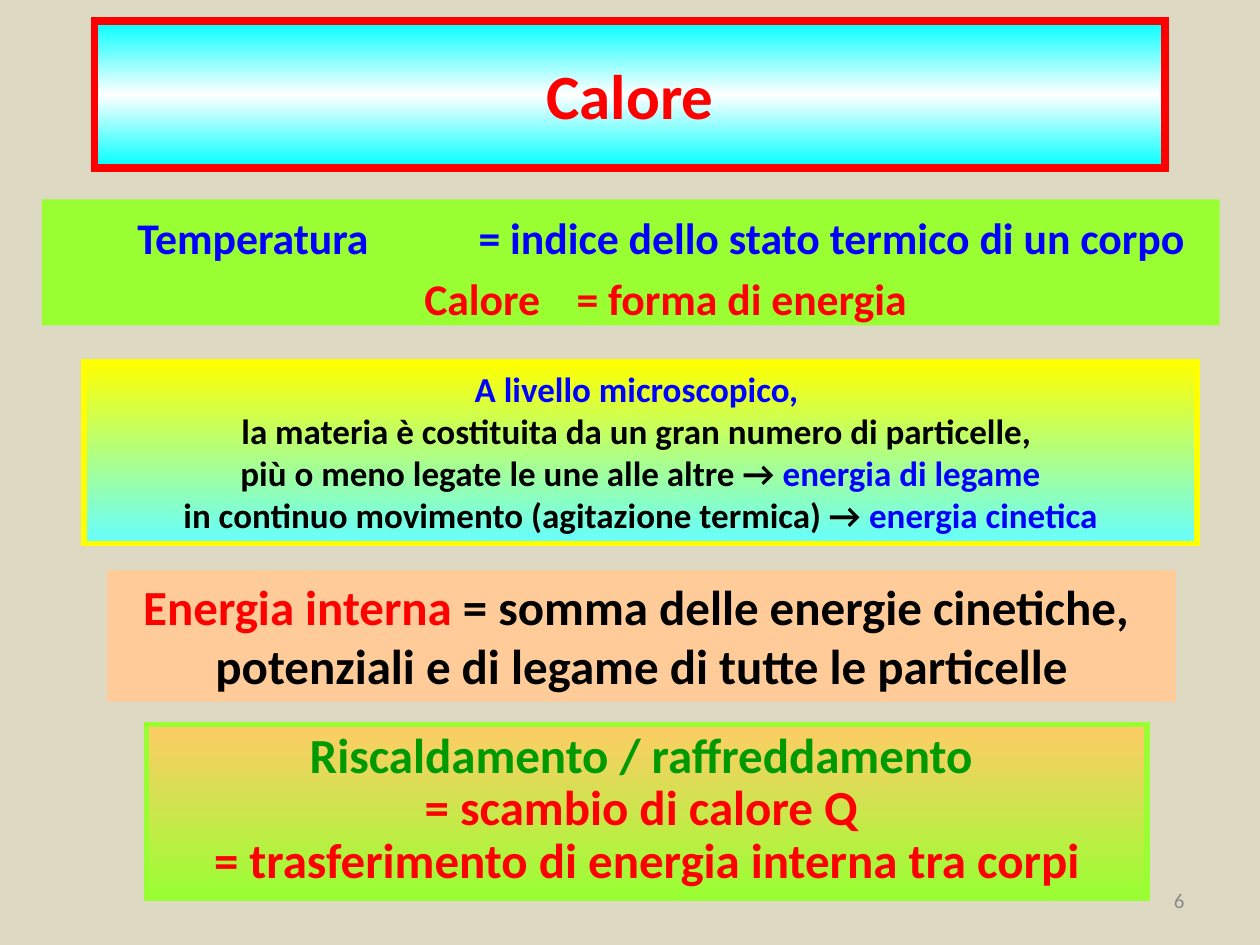
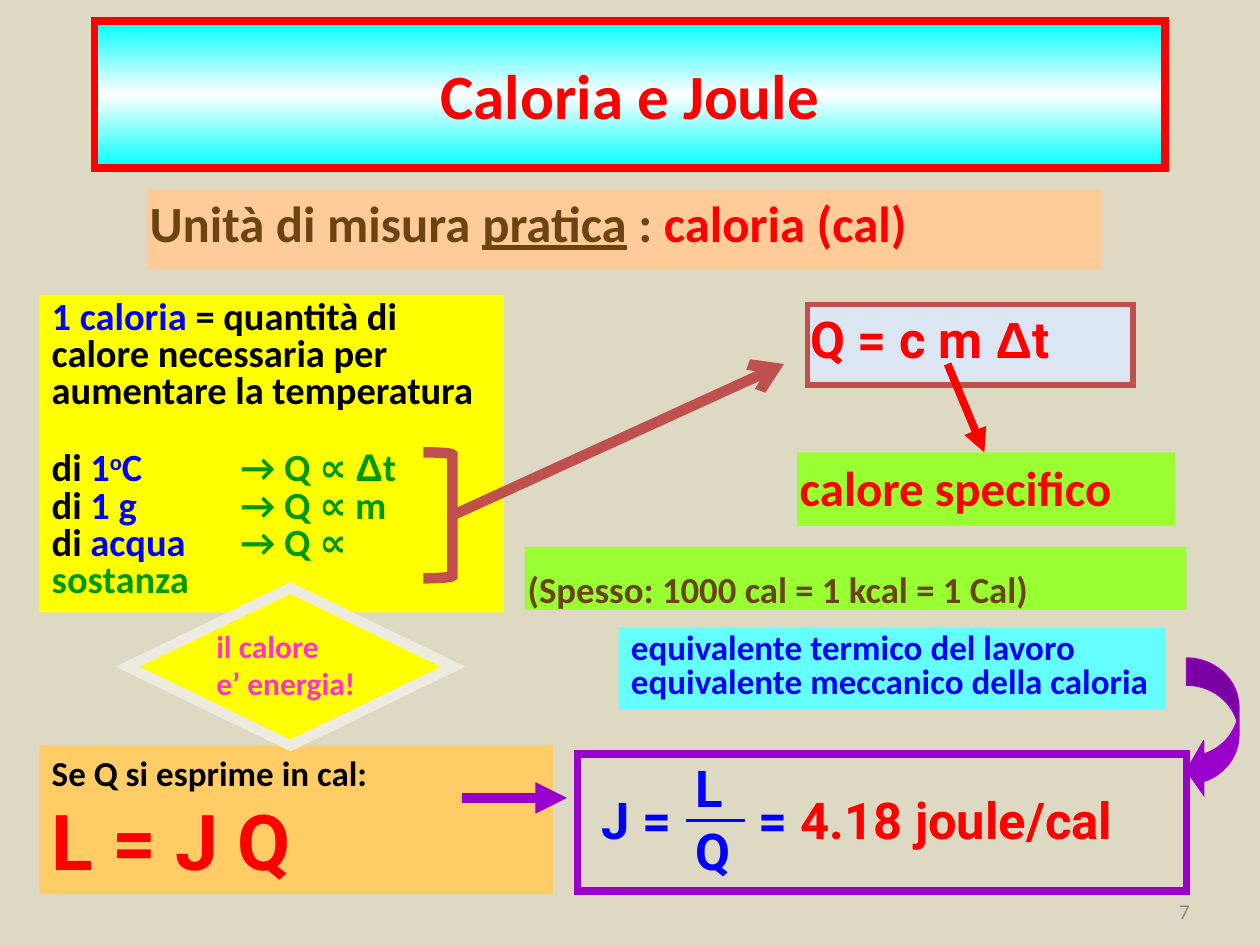
from dataclasses import dataclass

from lxml.etree import SubElement
from pptx import Presentation
from pptx.dml.color import RGBColor
from pptx.enum.shapes import MSO_CONNECTOR, MSO_SHAPE
from pptx.enum.text import MSO_ANCHOR, PP_ALIGN
from pptx.oxml.ns import qn
from pptx.util import Pt


@dataclass(frozen=True)
class Theme:
    sand: str = "DDD9C3"
    black: str = "000000"
    white: str = "FFFFFF"
    red: str = "FF0000"
    blue: str = "0000FF"
    green: str = "009900"
    lime: str = "99FF33"
    yellow: str = "FFFF00"
    cyan: str = "00FFFF"
    aqua: str = "66FFFF"
    peach: str = "FFCC99"
    orange: str = "FFCC66"
    brown: str = "6B4414"
    brick: str = "C0504D"
    violet: str = "9900CC"
    pink: str = "FF33CC"
    ice: str = "DCE6F2"
    ivory: str = "EEECE1"
    gray: str = "8C8C8C"
    body: str = "Calibri"
    math: str = "Roboto"
    greek: str = "Arial"
    title: int = 36
    huge: int = 44
    formula: int = 29
    large: int = 28
    term: int = 25
    cal: int = 22
    aside: int = 21
    text: int = 20
    small: int = 18
    number: int = 12


T = Theme()
WIDE = (7.2, 3.6)
TIGHT = (1.5, 2)
LEAD = Pt(34.5)
BREAK = ("\n", T.black)
SUPER = {"base": "30000"}
GREEK = {"font": T.greek}

# A run is (text, colour[, extras]); a paragraph is a list of runs.
HEAT = [
    dict(at=(24, 114, 673, 72), fill=T.lime, size=T.term, inset=TIGHT, lead=LEAD,
         tabs={0: (53, 248), 1: (217, 304)},
         text=[[("\tTemperatura\t= indice dello stato termico di un corpo", T.blue)],
               [("\tCalore\t= forma di energia", T.red)]]),
    dict(at=(48, 206.5, 636, 104), fill=(T.yellow, T.aqua), line=(T.yellow, 3),
         size=T.text, align=PP_ALIGN.CENTER,
         text=[[("A livello microscopico, ", T.blue)],
               [("la materia è costituita da un gran numero di particelle, ", T.black)],
               [("più o meno legate le une alle altre → ", T.black),
                ("energia di legame", T.blue)],
               [("in continuo movimento (agitazione termica) → ", T.black),
                ("energia cinetica", T.blue)]]),
    dict(at=(61, 326, 611, 75), fill=T.peach, size=T.large, align=PP_ALIGN.CENTER,
         text=[[("Energia interna", T.red), (" = somma delle energie cinetiche, ", T.black)],
               [("potenziali e di legame di tutte le particelle", T.black)]]),
    dict(at=(83.5, 414, 572, 99.5), fill=(T.orange, T.lime), line=(T.lime, 3),
         size=T.large, align=PP_ALIGN.CENTER, lead=0.9,
         text=[[("Riscaldamento / raffreddamento ", T.green)],
               [("= scambio di calore Q ", T.red)],
               [("= trasferimento di energia interna tra corpi", T.red)]]),
]


def sign(at, *runs, **style):
    """A one-line formula or label with fixed line spacing."""
    return dict(dict(at=at, inset=TIGHT, lead=LEAD, size=T.formula, text=[list(runs)]), **style)


JOULE = [
    sign((84, 108, 546, 46), ("Unità di misura ", T.brown),
         ("pratica", T.brown, {"under": True}), (" : ", T.brown),
         ("caloria (cal)", T.red), fill=T.peach),
    sign((300, 312.5, 378, 36), ("(Spesso: 1000 cal = 1 kcal = 1 Cal)", T.brown),
         fill=T.lime, size=T.aside),
    dict(at=(22.5, 168.5, 265.5, 181.5), fill=T.yellow, size=T.cal, lead=0.8,
         leads={1: 0.9}, gaps={1: 21}, tabs={1: (108,), 2: (108,), 3: (108,)},
         text=[[("1 caloria ", T.blue),
                ("= quantità di calore necessaria per aumentare la temperatura", T.black)],
               [("di ", T.black), ("1", T.blue), ("o", T.blue, SUPER), ("C\t", T.blue),
                ("→ Q ∝ ", T.green), ("Δ", T.green, GREEK), ("t", T.green)],
               [("di ", T.black), ("1 g\t", T.blue), ("→ Q ∝ m", T.green)],
               [("di ", T.black), ("acqua\t", T.blue), ("→ Q ∝ ", T.green),
                BREAK, ("sostanza", T.green)]]),
    dict(at=(22.5, 426, 293.5, 85), fill=T.orange, size=T.text,
         text=[[("Se Q si esprime in cal:", T.black)],
               [("L = J Q", T.red, {"font": T.math, "size": T.huge})]]),
    dict(ends=(264, 456, 324, 456), line=(T.violet, 6), head="triangle"),
    dict(at=(353.5, 358.5, 312.5, 47), fill=T.aqua, size=T.text, lead=0.8,
         text=[[("equivalente termico del lavoro", T.blue)],
               [("equivalente meccanico della caloria", T.blue)]]),
    sign((342, 449, 64, 46), ("J =", T.blue), font=T.math),
    sign((396, 431, 50, 46), ("L", T.blue), font=T.math),
    sign((396, 467, 52, 46), ("Q", T.blue), font=T.math),
    sign((432, 449, 236, 46), ("= ", T.blue), ("4.18 joule/cal", T.red), font=T.math),
    dict(ends=(392, 469, 425.5, 469), line=(T.blue, 2)),
    dict(at=(330, 431, 348, 78), line=(T.violet, 4.5)),
    dict(at=(678, 376, 30, 80), form=MSO_SHAPE.CURVED_LEFT_ARROW,
         adjust=(0.52, 1.04, 0.33), fill=T.violet, line=(T.violet, 0.75)),
    sign((461.5, 174, 186, 46), ("Q = c m ", T.red), ("Δ", T.red, GREEK), ("t", T.red),
         fill=T.ice, line=(T.brick, 3), font=T.math),
    dict(ends=(258.5, 294.5, 448, 208), line=(T.brick, 6), head="arrow"),
    dict(at=(242, 258.5, 16.5, 72), form=MSO_SHAPE.RIGHT_BRACKET, adjust=(0.08,),
         line=(T.brick, 6)),
    sign((455.5, 258.5, 216, 42), ("calore specifico", T.red), fill=T.lime, size=T.large),
    dict(ends=(541.5, 208, 562.5, 258.5), line=(T.red, 4.5), head="triangle"),
    dict(at=(73, 336, 186, 90), form=MSO_SHAPE.DIAMOND, fill=T.yellow, line=(T.ivory, 6)),
    dict(at=(116.5, 354.5, 104, 51), size=T.small,
         text=[[("il calore", T.pink)], [("e’ energia!", T.pink)]]),
]

# title, parts, page number, top left of the number
SLIDES = [("Calore", HEAT, "6", (516, 500)),
          ("Caloria e Joule", JOULE, "7", (519, 506))]


def rgb(code):
    return RGBColor.from_string(code)


def paint(shape, fill):
    """Fill with one colour, or top to bottom with evenly spaced colours."""
    if fill is None:
        shape.fill.background()
    elif isinstance(fill, str):
        shape.fill.solid()
        shape.fill.fore_color.rgb = rgb(fill)
    else:
        shape.fill.gradient()
        shape.fill.gradient_angle = 270
        stops = next(shape._element.iter(qn("a:gsLst")))
        for old in list(stops):
            stops.remove(old)
        for i, code in enumerate(fill):
            stop = SubElement(stops, qn("a:gs"), pos=str(100000 * i // (len(fill) - 1)))
            SubElement(stop, qn("a:srgbClr"), val=code)


def stroke(shape, line):
    """Draw the line with sharp corners, or none."""
    if line is None:
        shape.line.fill.background()
    else:
        shape.line.color.rgb = rgb(line[0])
        shape.line.width = Pt(line[1])
        SubElement(shape.line._get_or_add_ln(), qn("a:miter"), lim="800000")


def put(par, font, size, bold, text, code, extra=None):
    if text == "\n":
        par.add_line_break()
        return
    extra = extra or {}
    run = par.add_run()
    run.text = text
    run.font.name = extra.get("font", font)
    run.font.size = Pt(extra.get("size", size))
    run.font.bold = bold
    run.font.color.rgb = rgb(code)
    if "under" in extra:
        run.font.underline = True
    if "base" in extra:
        run._r.get_or_add_rPr().set("baseline", extra["base"])


def write(frame, text, size, font=T.body, bold=True, align=PP_ALIGN.LEFT, lead=None,
          leads={}, gaps={}, tabs={}, inset=WIDE, anchor=MSO_ANCHOR.TOP):
    frame.word_wrap = True
    frame.vertical_anchor = anchor
    frame.margin_left = frame.margin_right = Pt(inset[0])
    frame.margin_top = frame.margin_bottom = Pt(inset[1])
    for i, runs in enumerate(text):
        par = frame.add_paragraph() if i else frame.paragraphs[0]
        par.alignment = align
        par.line_spacing = leads.get(i, lead)
        if i in gaps:
            par.space_before = Pt(gaps[i])
        if i in tabs:
            stops = SubElement(par._p.get_or_add_pPr(), qn("a:tabLst"))
            for place in tabs[i]:
                SubElement(stops, qn("a:tab"), pos=str(Pt(place)), algn="l")
        for run in runs:
            put(par, font, size, bold, *run)


def link(slide, ends, line, head=None):
    wire = slide.shapes.add_connector(MSO_CONNECTOR.STRAIGHT, *map(Pt, ends))
    stroke(wire, line)
    if head:
        SubElement(wire.line._get_or_add_ln(), qn("a:tailEnd"), type=head)
    SubElement(wire._element.spPr, qn("a:effectLst"))


def block(slide, at, fill=None, line=None, form=MSO_SHAPE.RECTANGLE, adjust=(),
          text=None, **style):
    """A shape with optional text; plain text becomes a text box."""
    place = map(Pt, at)
    if text and not fill and not line:
        shape = slide.shapes.add_textbox(*place)
    else:
        shape = slide.shapes.add_shape(form, *place)
        shape.shadow.inherit = False
        paint(shape, fill)
        stroke(shape, line)
        for i, value in enumerate(adjust):
            shape.adjustments[i] = value
    if text:
        write(shape.text_frame, text, **style)


def build(deck, title, parts, page, spot):
    slide = deck.slides.add_slide(deck.slide_layouts[6])
    for part in parts:
        (link if "ends" in part else block)(slide, **part)
    block(slide, (54, 12, 612, 84), fill=(T.cyan, T.white, T.cyan), line=(T.red, 4.5),
          text=[[(title, T.red)]], size=T.title, align=PP_ALIGN.CENTER,
          anchor=MSO_ANCHOR.MIDDLE)
    block(slide, (*spot, 168, 29), text=[[(page, T.gray)]], size=T.number, bold=False,
          align=PP_ALIGN.RIGHT, anchor=MSO_ANCHOR.MIDDLE)


def main():
    deck = Presentation()
    deck.slide_width, deck.slide_height = Pt(720), Pt(540)
    back = deck.slide_master.background.fill
    back.solid()
    back.fore_color.rgb = rgb(T.sand)
    for entry in SLIDES:
        build(deck, *entry)
    deck.save("out.pptx")


if __name__ == "__main__":
    main()
